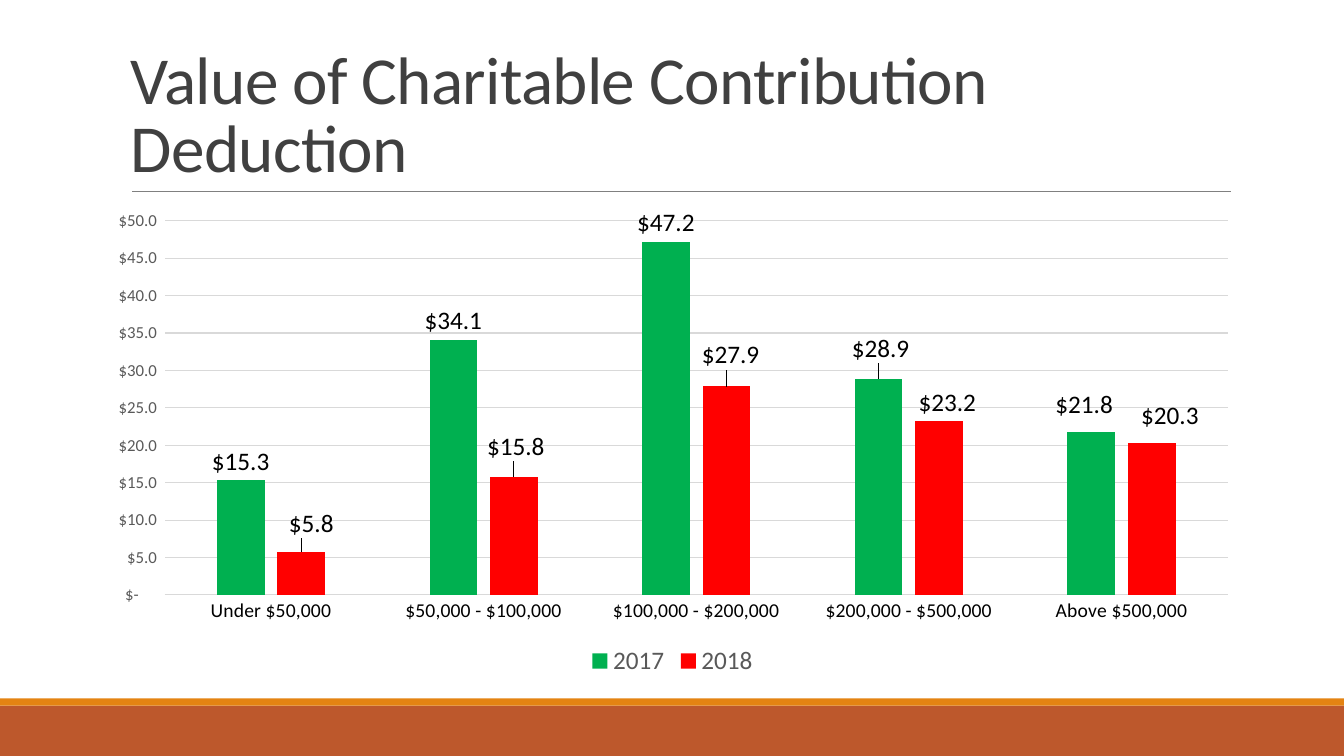
from pptx import Presentation
from pptx.chart.data import CategoryChartData
from pptx.dml.color import RGBColor
from pptx.enum.chart import XL_CHART_TYPE, XL_LABEL_POSITION, XL_LEGEND_POSITION, XL_TICK_MARK
from pptx.enum.shapes import MSO_CONNECTOR, MSO_SHAPE
from pptx.enum.text import MSO_ANCHOR
from pptx.oxml import parse_xml
from pptx.oxml.ns import nsdecls, qn
from pptx.util import Inches, Pt

CLUSTERED = XL_CHART_TYPE.COLUMN_CLUSTERED
OUTSIDE_END = XL_LABEL_POSITION.OUTSIDE_END
LEGEND_BOTTOM = XL_LEGEND_POSITION.BOTTOM
NO_TICK = XL_TICK_MARK.NONE
STRAIGHT = MSO_CONNECTOR.STRAIGHT
RECTANGLE = MSO_SHAPE.RECTANGLE
BOTTOM = MSO_ANCHOR.BOTTOM

FONT = "Calibri"
DOLLARS = '_("$"* #,##0.0_);_("$"* \\(#,##0.0\\);_("$"* "-"??_);_(@_)'
INCOMES = ["Under $50,000", "$50,000 - $100,000", "$100,000 - $200,000",
           "$200,000 - $500,000", "Above $500,000"]
CHART_W, CHART_H = 11.5, 4.76
YEARS = [
    ("2017", "00B050", [15.3, 34.1, 47.2, 28.9, 21.8],
     {3: (0.02, -0.11), 4: (-0.07, -0.08)}),
    ("2018", "FF0000", [5.8, 15.8, 27.9, 23.2, 20.3],
     {0: (0.1, -0.09), 1: (0.02, -0.11), 2: (0.04, -0.12), 3: (0.08, 0),
      4: (0.18, -0.08)}),
]


def rgb(color):
    return RGBColor.from_string(color)


def style_font(font, size, color):
    font.name = FONT
    font.size = Pt(size)
    font.color.rgb = rgb(color)


def style_line(line, color, width):
    line.color.rgb = rgb(color)
    line.width = Pt(width)


def add_band(slide, top, height, color):
    sp = slide.shapes.add_shape(RECTANGLE, 0, Inches(top), Inches(13.33), Inches(height))
    sp.shadow.inherit = False
    sp.fill.solid()
    sp.fill.fore_color.rgb = rgb(color)
    sp.line.fill.background()


def add_rule(slide, left, right, y):
    line = slide.shapes.add_connector(STRAIGHT, Inches(left), Inches(y), Inches(right), Inches(y))
    style_line(line.line, "808080", 0.5)
    line._element.spPr.append(parse_xml(f"<a:effectLst {nsdecls('a')}/>"))


def add_title(slide, text):
    box = slide.shapes.add_textbox(Inches(1.2), Inches(0.31), Inches(11), Inches(1.59))
    tf = box.text_frame
    tf.word_wrap = True
    tf.vertical_anchor = BOTTOM
    tf.text = text
    p = tf.paragraphs[0]
    p.line_spacing = 0.85
    r = p.runs[0]
    style_font(r.font, 48, "404040")
    r.font._element.set("spc", "-50")


def manual_layout(**values):
    items = "".join(f'<c:{name} val="{value}"/>' for name, value in values.items())
    return parse_xml(f"<c:layout {nsdecls('c')}><c:manualLayout>{items}"
                     "</c:manualLayout></c:layout>")


def place_plot(chart):
    area = chart._chartSpace.find(qn("c:chart")).find(qn("c:plotArea"))
    for layout in area.findall(qn("c:layout")):
        area.remove(layout)
    area.insert(0, manual_layout(layoutTarget="inner", xMode="edge", yMode="edge",
                                 x=0.062, y=0.04, w=0.917, h=0.78))


def style_labels(series, offsets):
    labels = series.data_labels
    labels.show_value = True
    labels.position = OUTSIDE_END
    labels.number_format = DOLLARS
    labels.number_format_is_linked = False
    style_font(labels.font, 18, "000000")
    for index in offsets:
        label = series.points[index].data_label
        label.position = OUTSIDE_END
        style_font(label.font, 18, "000000")
    for element, (dx, dy) in zip(labels._element.findall(qn("c:dLbl")), offsets.values()):
        element.insert(1, manual_layout(x=round(dx / CHART_W, 4), y=round(dy / CHART_H, 4)))
        number = parse_xml(f'<c:numFmt {nsdecls("c")} formatCode="" sourceLinked="0"/>')
        number.set("formatCode", DOLLARS)
        element.insert(2, number)


def style_axes(chart):
    for axis, size, color in ((chart.category_axis, 14, "000000"),
                              (chart.value_axis, 12, "595959")):
        axis.major_tick_mark = NO_TICK
        axis.minor_tick_mark = NO_TICK
        style_font(axis.tick_labels.font, size, color)
    style_line(chart.category_axis.format.line, "D9D9D9", 0.75)
    values = chart.value_axis
    values.minimum_scale = 0
    values.maximum_scale = 50
    values.major_unit = 5
    values.format.line.fill.background()
    style_line(values.major_gridlines.format.line, "D9D9D9", 0.75)
    values.tick_labels.number_format = DOLLARS
    values.tick_labels.number_format_is_linked = False


def add_deduction_chart(slide):
    data = CategoryChartData(number_format=DOLLARS)
    data.categories = INCOMES
    for year, _, amounts, _ in YEARS:
        data.add_series(year, amounts)
    chart = slide.shapes.add_chart(CLUSTERED, Inches(0.92), Inches(2), Inches(CHART_W),
                                   Inches(CHART_H), data).chart
    style_font(chart.font, 10, "000000")
    chart.has_title = False
    chart.has_legend = True
    chart.legend.position = LEGEND_BOTTOM
    chart.legend.include_in_layout = False
    style_font(chart.legend.font, 18, "595959")
    plot = chart.plots[0]
    plot.gap_width = 219
    plot.overlap = -27
    plot.vary_by_categories = False
    for series, (_, color, _, offsets) in zip(plot.series, YEARS):
        series.format.fill.solid()
        series.format.fill.fore_color.rgb = rgb(color)
        style_labels(series, offsets)
    style_axes(chart)
    place_plot(chart)


def main():
    prs = Presentation()
    prs.slide_width = Inches(13.33)
    prs.slide_height = Inches(7.5)
    slide = prs.slides.add_slide(prs.slide_layouts[6])
    add_band(slide, 7, 0.5, "BD582C")
    add_band(slide, 6.93, 0.07, "E48312")
    add_rule(slide, 1.31, 12.21, 1.9)
    add_title(slide, "Value of Charitable Contribution Deduction")
    add_deduction_chart(slide)
    prs.save("out.pptx")


if __name__ == "__main__":
    main()
